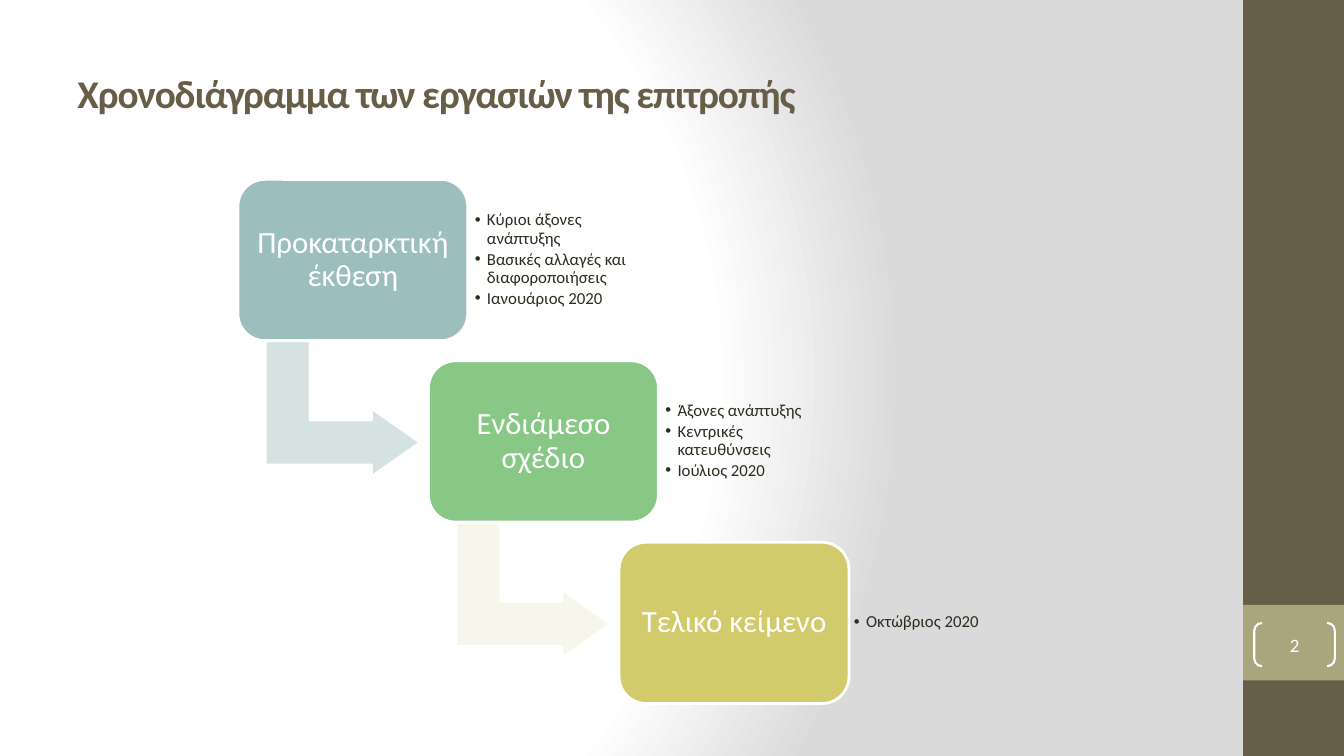
from lxml import etree
from pptx import Presentation
from pptx.dml.color import RGBColor
from pptx.enum.shapes import MSO_SHAPE
from pptx.enum.text import MSO_ANCHOR, PP_ALIGN
from pptx.oxml import parse_xml
from pptx.oxml.ns import nsdecls, qn
from pptx.util import Pt

RECTANGLE = MSO_SHAPE.RECTANGLE
ROUNDED = MSO_SHAPE.ROUNDED_RECTANGLE
BENT_ARROW = MSO_SHAPE.BENT_UP_ARROW
BRACKETS = MSO_SHAPE.DOUBLE_BRACKET
MIDDLE = MSO_ANCHOR.MIDDLE
LEFT, CENTER = PP_ALIGN.LEFT, PP_ALIGN.CENTER

PX = 9144
SLIDE_WIDTH, SLIDE_HEIGHT = 1333, 750
FONT = "Calibri"
WHITE, BROWN, KHAKI, INK = "FFFFFF", "675E47", "A9A57C", "2F2B20"
GRADIENT_STOPS = [(0, WHITE), (75, WHITE), (100, "DADADA")]

TITLE = "Χρονοδιάγραμμα των εργασιών της επιτροπής"
STEPS = [
    ("Προκαταρκτική έκθεση", "9CBEBD", "D5E2E1", 7,
     ["Κύριοι άξονες ανάπτυξης", "Βασικές αλλαγές και διαφοροποιήσεις", "Ιανουάριος 2020"]),
    ("Ενδιάμεσο σχέδιο", "88C785", "F7F6EB", 7,
     ["Άξονες ανάπτυξης", "Κεντρικές κατευθύνσεις", "Ιούλιος 2020"]),
    ("Τελικό κείμενο", "D2CB6C", None, 5, ["Οκτώβριος 2020"]),
]
STEP_WIDTH, STEP_HEIGHT = 228, 160
STEP_RIGHT, STEP_DOWN = 189, 180


def color(value):
    return RGBColor.from_string(value)


def apply_format(target, values):
    for name, value in values.items():
        setattr(target, name, value)


def emu(*lengths):
    return [length * PX for length in lengths]


def add_shape(slide, kind, box, fill=None, line=None, line_width=2, adjustments=()):
    shape = slide.shapes.add_shape(kind, *emu(*box))
    shape.shadow.inherit = False
    if fill:
        shape.fill.solid()
        shape.fill.fore_color.rgb = color(fill)
    else:
        shape.fill.background()
    if line:
        shape.line.color.rgb = color(line)
        shape.line.width = Pt(line_width)
    else:
        shape.line.fill.background()
    for index, value in enumerate(adjustments):
        shape.adjustments[index] = value
    return shape


def write_text(shape, texts, size, ink, inset, bold=False, **paragraph_format):
    frame = shape.text_frame
    margins = {f"margin_{side}": inset * PX for side in ("left", "top", "right", "bottom")}
    apply_format(frame, {"word_wrap": True, "vertical_anchor": MIDDLE, **margins})
    for index, text in enumerate(texts):
        paragraph = frame.add_paragraph() if index else frame.paragraphs[0]
        apply_format(paragraph, paragraph_format)
        run = paragraph.add_run()
        run.text = text
        apply_format(run.font, {"name": FONT, "size": Pt(size), "bold": bold})
        run.font.color.rgb = color(ink)
    return frame.paragraphs


def add_bullet(paragraph, indent):
    properties = paragraph._p.get_or_add_pPr()
    properties.set("marL", str(indent * PX))
    properties.set("indent", str(-indent * PX))
    etree.SubElement(properties, qn("a:buFont")).set("typeface", "Arial")
    etree.SubElement(properties, qn("a:buChar")).set("char", "•")


def set_background(slide):
    slide.background.fill.gradient()
    stops = "".join(
        f'<a:gs pos="{position * 1000}"><a:srgbClr val="{value}"/></a:gs>'
        for position, value in GRADIENT_STOPS
    )
    gradient = parse_xml(
        f'<a:gradFill {nsdecls("a")} rotWithShape="1"><a:gsLst>{stops}</a:gsLst>'
        '<a:path path="circle"><a:fillToRect l="20000" t="50000" r="100000" b="50000"/>'
        '</a:path></a:gradFill>'
    )
    properties = slide._element.find(".//" + qn("p:bgPr"))
    properties.replace(properties.find(qn("a:gradFill")), gradient)


def add_sidebar(slide, left, top, width, height):
    add_shape(slide, RECTANGLE, (left, top, width, height), BROWN)
    add_shape(slide, RECTANGLE, (left, top + 600, width, 75), KHAKI)
    number = add_shape(slide, BRACKETS, (left + 11, top + 618, 80, 43),
                       line=WHITE, line_width=1.5, adjustments=[0.179])
    write_text(number, ["2"], 13.5, WHITE, 0, alignment=CENTER)


def add_title(slide, *box):
    title = slide.shapes.add_textbox(*emu(*box))
    paragraphs = write_text(title, [TITLE], 28, BROWN, 10, bold=True, alignment=LEFT)
    paragraphs[0].runs[0]._r.get_or_add_rPr().set("spc", "-80")


def add_step(slide, left, top, width, height, step):
    label, fill, arrow_fill, inset, details = step
    if arrow_fill:
        arrow = add_shape(slide, BENT_ARROW, (left + 36, top + height - 10, 136, 154),
                          arrow_fill, WHITE, adjustments=[0.328, 0.25, 0.358])
        arrow.rotation = 90
    card = add_shape(slide, ROUNDED, (left, top, width, height), fill, WHITE,
                     adjustments=[0.167])
    write_text(card, [label], 22, WHITE, 9, alignment=CENTER, line_spacing=0.9)
    notes = slide.shapes.add_textbox(*emu(left + width, top + 15, 166, 129))
    for paragraph in write_text(notes, details, 12, INK, inset, alignment=LEFT,
                                line_spacing=0.9, space_after=Pt(2)):
        add_bullet(paragraph, 12)


def add_staircase(slide, left, top):
    for index, step in enumerate(STEPS):
        add_step(slide, left + index * STEP_RIGHT, top + index * STEP_DOWN,
                 STEP_WIDTH, STEP_HEIGHT, step)


def main():
    presentation = Presentation()
    apply_format(presentation, {"slide_width": SLIDE_WIDTH * PX,
                                "slide_height": SLIDE_HEIGHT * PX})
    slide = presentation.slides.add_slide(presentation.slide_layouts[6])
    set_background(slide)
    add_sidebar(slide, SLIDE_WIDTH - 100, 0, 100, SLIDE_HEIGHT)
    add_title(slide, 67, 30, 1111, 125)
    add_staircase(slide, 236, 178)
    presentation.save("out.pptx")


if __name__ == "__main__":
    main()
